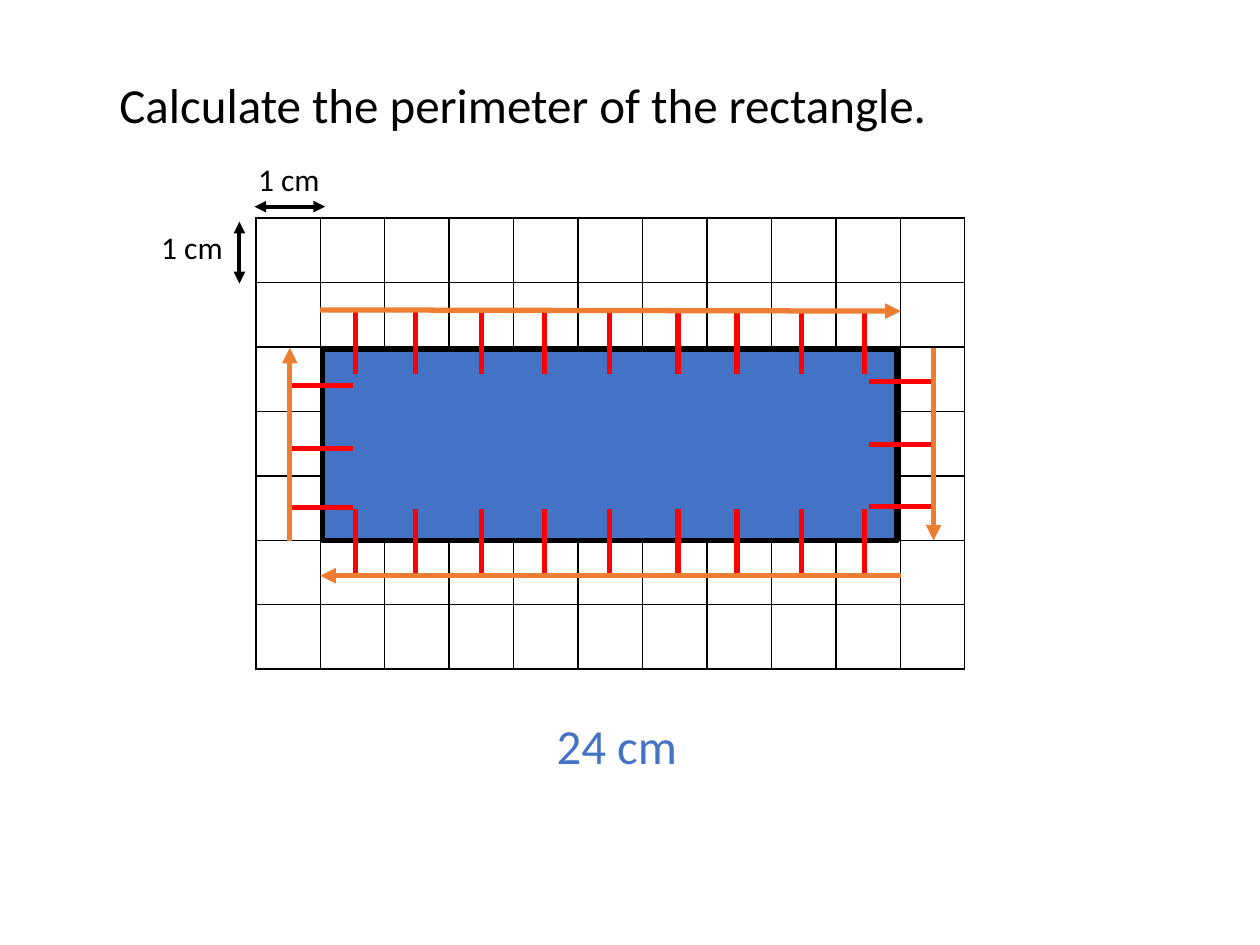
from dataclasses import dataclass

from lxml.etree import SubElement as Sub
from pptx import Presentation
from pptx.dml.color import RGBColor as RGB
from pptx.enum.shapes import MSO_CONNECTOR as Link, MSO_SHAPE as Shape
from pptx.oxml.ns import qn
from pptx.util import Pt


@dataclass(frozen=True)
class Theme:
    font: str = "Calibri"
    black: str = "000000"
    blue: str = "4472C4"
    red: str = "FF0000"
    orange: str = "ED7D31"
    large: int = 28
    small: int = 18
    thin: float = 1
    mid: float = 2.25
    thick: float = 3


THEME = Theme()
COLS, ROWS, CELL = 11, 7, 36.85
LEFT, TOP = 146.2, 124.6
TICK = 36.7
TICKS_X = (203, 237.6, 275, 311, 348.5, 387.4, 421.2, 457.9, 493.9)
TICKS_LEFT = (220.3, 256.3, 290.2)
TICKS_RIGHT = (218.2, 254.2, 289.4)


def add_text(slide, text, x, y, w, h, size, color=THEME.black, wrap=False):
    frame = slide.shapes.add_textbox(Pt(x), Pt(y), Pt(w), Pt(h)).text_frame
    frame.word_wrap = wrap
    para = frame.paragraphs[0]
    para.text = text
    para.font.name = THEME.font
    para.font.size = Pt(size)
    para.font.color.rgb = RGB.from_string(color)


def add_line(slide, x1, y1, x2, y2, color, width, ends=()):
    """Draw a straight line; ends names the ends that carry arrowheads."""
    line = slide.shapes.add_connector(
        Link.STRAIGHT, Pt(x1), Pt(y1), Pt(x2), Pt(y2))
    line.line.color.rgb = RGB.from_string(color)
    line.line.width = Pt(width)
    for end in ends:
        Sub(line.line._get_or_add_ln(), qn(f"a:{end}"), type="triangle")
    Sub(line._element.spPr, qn("a:effectLst"))


def add_border(cell):
    props = cell._tc.get_or_add_tcPr()
    for side in ("lnL", "lnR", "lnT", "lnB"):
        edge = Sub(props, qn(f"a:{side}"), w=str(Pt(THEME.thin)))
        fill = Sub(edge, qn("a:solidFill"))
        Sub(fill, qn("a:srgbClr"), val=THEME.black)


def add_grid(slide):
    table = slide.shapes.add_table(
        ROWS, COLS, Pt(LEFT), Pt(TOP), Pt(COLS * CELL), Pt(ROWS * CELL)).table
    table.first_row = table.horz_banding = False
    for col in table.columns:
        col.width = Pt(CELL)
    for row in table.rows:
        row.height = Pt(CELL)
    for cell in table.iter_cells():
        add_border(cell)
        cell.fill.background()


def add_scale(slide):
    both = ("headEnd", "tailEnd")
    add_line(slide, 136.8, 126.7, 136.8, 162, THEME.black, THEME.mid, both)
    add_text(slide, "1 cm", 85, 126.7, 61.2, 29, THEME.small, wrap=True)
    add_line(slide, 185.8, 118.1, 145.4, 118.1, THEME.black, THEME.mid, both)
    add_text(slide, "1 cm", 140.4, 87.8, 50.4, 29, THEME.small)


def add_box(slide):
    box = slide.shapes.add_shape(
        Shape.RECTANGLE, Pt(184.3), Pt(199.4), Pt(328.3), Pt(109.4))
    box.shadow.inherit = False
    box.fill.solid()
    box.fill.fore_color.rgb = RGB.from_string(THEME.blue)
    box.line.color.rgb = RGB.from_string(THEME.black)
    box.line.width = Pt(THEME.thick)


def add_ticks(slide):
    """Mark each centimetre along the four sides."""
    for y in (177.1, 290.9):
        for x in TICKS_X:
            add_line(slide, x, y, x, y + TICK, THEME.red, THEME.thick)
    for x, marks in ((496.8, TICKS_RIGHT), (164.9, TICKS_LEFT)):
        for y in marks:
            add_line(slide, x, y, x + TICK, y, THEME.red, THEME.thick)


def add_route(slide):
    """Draw the arrows that run clockwise round the rectangle."""
    west, east, north, south = 182.9, 514.8, 198.7, 308.9
    for ends in (
        (east, 329, west, 329),
        (533.5, north, 533.5, south),
        (west, 177.1, east, 177.8),
        (165.6, south, 165.6, north),
    ):
        add_line(slide, *ends, THEME.orange, THEME.thick, ("tailEnd",))


def main():
    deck = Presentation()
    deck.slide_width, deck.slide_height = Pt(720), Pt(540)
    slide = deck.slides.add_slide(deck.slide_layouts[6])
    add_text(slide, "Calculate the perimeter of the rectangle.",
             61.2, 38.9, 480.2, 41, THEME.large)
    add_grid(slide)
    add_scale(slide)
    add_box(slide)
    add_ticks(slide)
    add_text(slide, "24 cm", 311, 405.4, 84.2, 41, THEME.large, THEME.blue)
    add_route(slide)
    deck.save("out.pptx")


if __name__ == "__main__":
    main()
